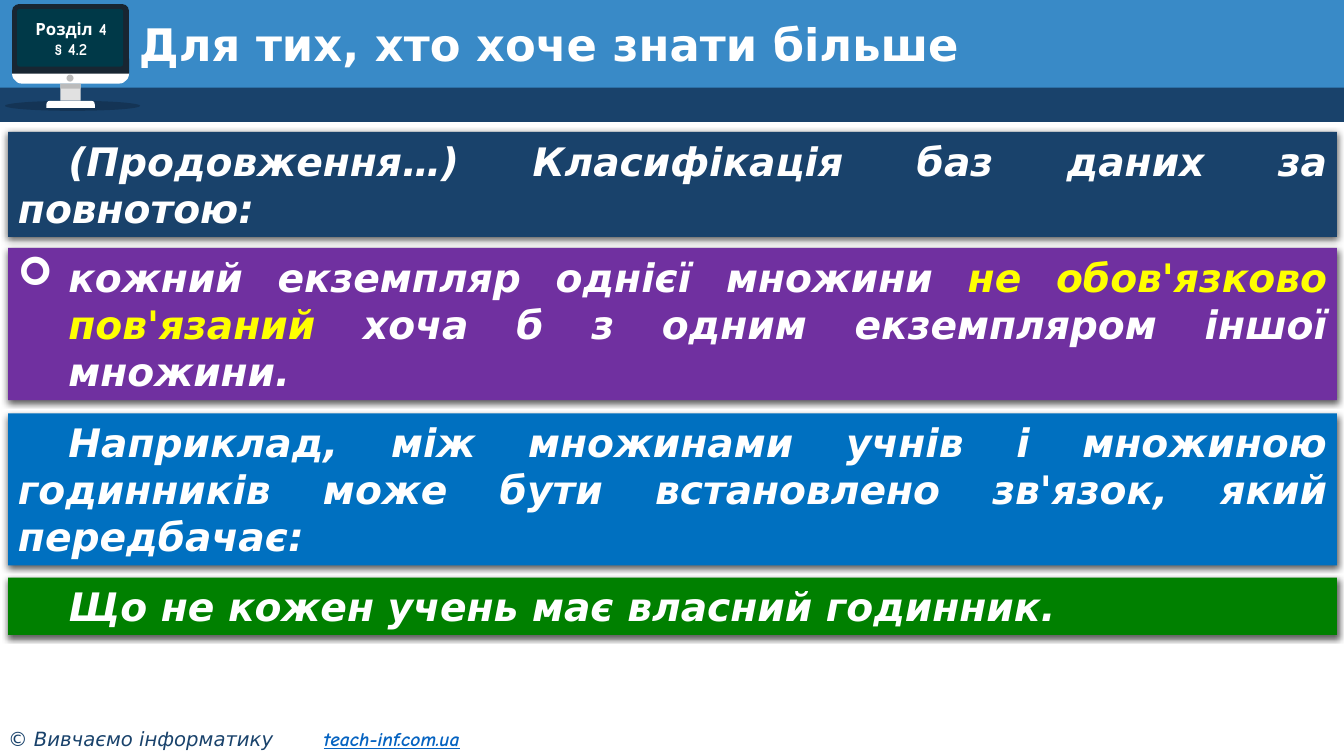
from lxml import etree
from pptx import Presentation
from pptx.dml.color import RGBColor
from pptx.enum.shapes import MSO_SHAPE
from pptx.enum.text import MSO_ANCHOR, PP_ALIGN
from pptx.oxml.ns import qn
from pptx.util import Inches, Pt

RECT = MSO_SHAPE.RECTANGLE
OVAL = MSO_SHAPE.OVAL
ROUNDED = MSO_SHAPE.ROUNDED_RECTANGLE
ROUND_TOP = MSO_SHAPE.ROUND_2_SAME_RECTANGLE
LEFT, CENTER, JUSTIFY = PP_ALIGN.LEFT, PP_ALIGN.CENTER, PP_ALIGN.JUSTIFY
TOP, MIDDLE = MSO_ANCHOR.TOP, MSO_ANCHOR.MIDDLE

NAVY, WHITE, YELLOW = "19426B", "FFFFFF", "FFFF00"
MAIN_FONT, HAND_FONT = "DejaVu Sans", "Comic Neue"


def color(value):
    return RGBColor.from_string(value)


class SlideBuilder:
    card_text = {"name": MAIN_FONT, "size": Pt(28), "bold": True,
                 "italic": True, "color": WHITE}
    title_text = {"name": MAIN_FONT, "size": Pt(32), "bold": True, "color": WHITE}
    screen_text = {"name": HAND_FONT, "size": Pt(12), "bold": True, "color": WHITE}
    footer_text = {"name": MAIN_FONT, "size": Pt(14), "italic": True, "color": NAVY}
    site_text = {"name": HAND_FONT, "bold": True, "underline": True, "color": "0563C1"}

    def __init__(self, deck):
        self.slide = deck.slides.add_slide(deck.slide_layouts[6])

    def shape(self, kind, place, fill, rounding=None, alpha=None):
        shape = self.slide.shapes.add_shape(kind, *map(Inches, place))
        shape.shadow.inherit = False
        shape.fill.solid()
        shape.fill.fore_color.rgb = color(fill)
        shape.line.fill.background()
        if rounding is not None:
            shape.adjustments[0] = rounding
        if alpha is not None:
            tint = shape.fill._xPr.find(f".//{qn('a:srgbClr')}")
            etree.SubElement(tint, qn("a:alpha"), val=str(alpha * 1000))
        return shape

    def drop_shadow(self, shape):
        effects = shape._element.spPr.find(qn("a:effectLst"))
        shadow = etree.SubElement(effects, qn("a:outerShdw"), blurRad=str(Pt(4.5)),
                                  dist=str(Pt(1.5)), dir="5400000", rotWithShape="0")
        tint = etree.SubElement(shadow, qn("a:srgbClr"), val="000000")
        etree.SubElement(tint, qn("a:alpha"), val="63000")

    def spans(self, para, parts):
        for text, style in parts:
            span = para.add_run()
            span.text = text
            for name, value in style.items():
                if name == "color":
                    span.font.color.rgb = color(value)
                else:
                    setattr(span.font, name, value)

    def text(self, place, paragraphs, align=LEFT, anchor=TOP, spacing=1.0):
        box = self.slide.shapes.add_textbox(*map(Inches, place))
        frame = box.text_frame
        frame.word_wrap = True
        frame.vertical_anchor = anchor
        for number, parts in enumerate(paragraphs):
            para = frame.add_paragraph() if number else frame.paragraphs[0]
            para.alignment = align
            para.line_spacing = spacing
            self.spans(para, parts)
        return box

    def card(self, top, height, fill, parts, bullet=None):
        card = self.shape(RECT, (0.08, top, 13.18, height), fill)
        self.drop_shadow(card)
        frame = card.text_frame
        frame.word_wrap = True
        frame.vertical_anchor = TOP
        para = frame.paragraphs[0]
        para.alignment = JUSTIFY
        settings = para._p.get_or_add_pPr()
        indent = Inches(0.5)
        settings.set("marL", str(indent if bullet else 0))
        settings.set("indent", str(-indent if bullet else indent))
        if bullet:
            etree.SubElement(settings, qn("a:buFont"), typeface="Wingdings")
            etree.SubElement(settings, qn("a:buChar"), char=bullet)
        self.spans(para, [(text, {**self.card_text, **extra}) for text, extra in parts])

    def monitor(self):
        self.shape(OVAL, (0.05, 1, 1.34, 0.1), "000000", alpha=20)
        self.shape(ROUNDED, (0.12, 0.6, 1.16, 0.23), WHITE, 0.43)
        self.shape(ROUND_TOP, (0.12, 0.04, 1.16, 0.69), "182632", 0.1)
        self.shape(RECT, (0.6, 0.83, 0.2, 0.17), "E1E1E1")
        self.shape(RECT, (0.6, 0.83, 0.2, 0.05), "BBBBBB")
        self.shape(ROUND_TOP, (0.46, 1, 0.48, 0.07), WHITE, 0.5)
        self.shape(OVAL, (0.66, 0.74, 0.07, 0.07), "BBBBBB")
        self.shape(ROUNDED, (0.17, 0.09, 1.05, 0.57), "003948", 0.04)
        lines = ("Розділ 4", "§ 4.2")
        self.text((0.13, 0.09, 1.15, 0.59),
                  [[(line, self.screen_text)] for line in lines], CENTER, MIDDLE)

    def footer(self, owner, site):
        box = self.text((0, 7.16, 5.21, 0.34), [[]])
        box.text_frame.margin_left = Inches(0.08)
        para = box.text_frame.paragraphs[0]
        tabs = etree.SubElement(para._p.get_or_add_pPr(), qn("a:tabLst"))
        etree.SubElement(tabs, qn("a:tab"), pos=str(Inches(3.13)), algn="l")
        self.spans(para, [(owner + "\t", self.footer_text),
                          (site, {**self.footer_text, **self.site_text})])


def main():
    deck = Presentation()
    deck.slide_width, deck.slide_height = Inches(13.33), Inches(7.5)
    page = SlideBuilder(deck)

    # Header bands, monitor and title
    page.shape(RECT, (0, 0, 13.33, 0.91), "398AC7")
    page.shape(RECT, (0, 0.87, 13.33, 0.34), NAVY)
    page.monitor()
    page.text((1.28, 0.18, 11.72, 0.58),
              [[("Для тих, хто хоче знати більше", page.title_text)]],
              anchor=MIDDLE, spacing=0.9)

    # Text cards
    page.card(1.31, 1.04, NAVY,
              [("(Продовження…) Класифікація баз даних за повнотою:", {})])
    page.card(2.46, 1.51, "7030A0",
              [("кожний екземпляр однієї множини ", {}),
               ("не обов'язково пов'язаний", {"color": YELLOW}),
               (" хоча б з одним екземпляром іншої множини.", {})], bullet="➢")
    page.card(4.1, 1.51, "0070C0",
              [("Наприклад, між множинами учнів і множиною годинників може бути "
                "встановлено зв'язок, який передбачає:", {})])
    page.card(5.73, 0.57, "008000",
              [("Що не кожен учень має власний годинник.", {})])

    # Footer
    page.footer("© Вивчаємо інформатику", "teach-inf.com.ua")
    deck.save("out.pptx")


if __name__ == "__main__":
    main()
